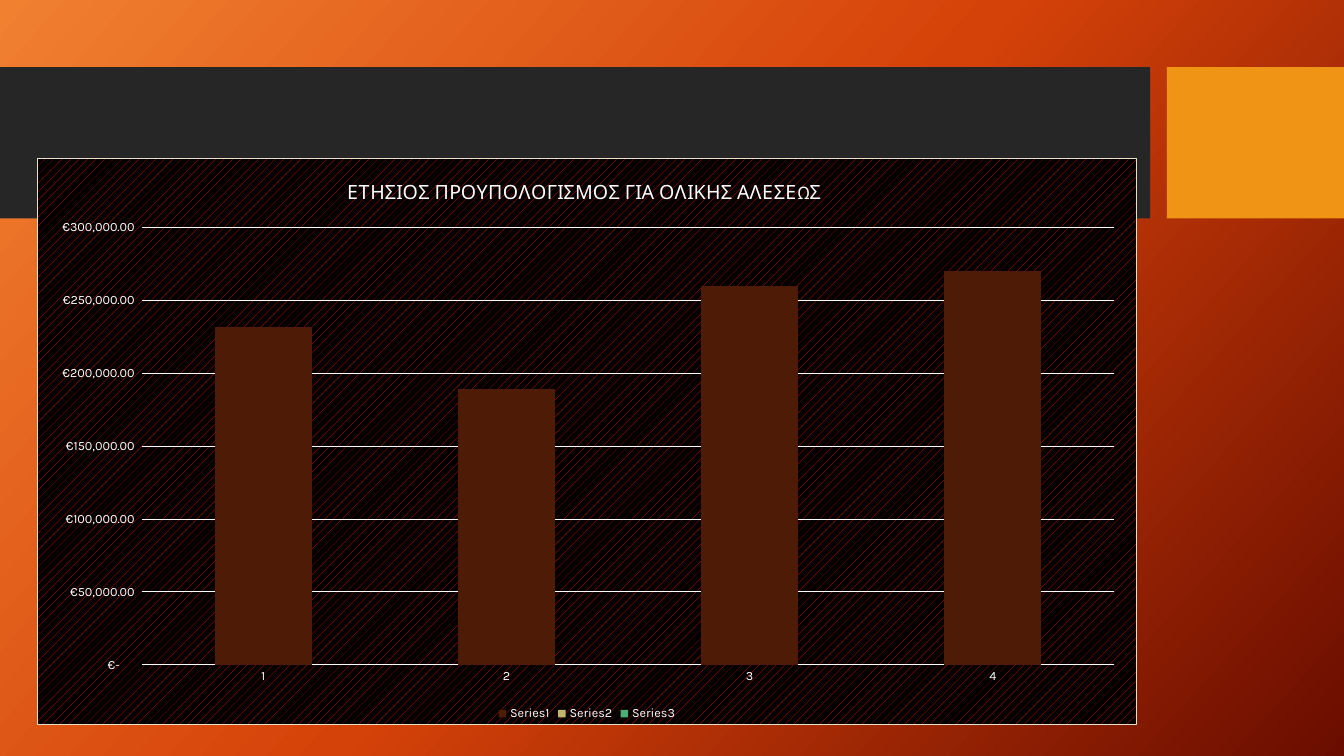
"""Build a slide with a stacked column chart of a yearly budget."""
from pptx import Presentation
from pptx.chart.data import CategoryChartData
from pptx.dml.color import RGBColor
from pptx.enum.chart import XL_CHART_TYPE as ChartType, XL_LEGEND_POSITION as LegendPos, XL_TICK_MARK as Tick
from pptx.enum.shapes import MSO_SHAPE as Shape
from pptx.oxml import parse_xml
from pptx.oxml.ns import nsdecls, qn
from pptx.util import Pt

FONT = "Karla"
WHITE = "FFFFFF"
TITLE = "ΕΤΗΣΙΟΣ ΠΡΟΥΠΟΛΟΓΙΣΜΟΣ ΓΙΑ ΟΛΙΚΗΣ ΑΛΕΣΕΩΣ "
GRADIENT = [(0, "F18031"), (50, "D54209"), (100, "6A0D00")]
GRADIENT_ANGLE = 42
BANDS = [(0, 821.5, "262626"), (833.5, 126.5, "F09415")]
BAND_TOP, BAND_HEIGHT = 48, 108
CHART_BOX = (26.2, 113, 786, 405.2)
PLOT_AREA = {"x": 0.095, "y": 0.122, "w": 0.885, "h": 0.772}
CATEGORIES = ["1", "2", "3", "4"]
SERIES = [
    ("Series1", [232000, 189000, 260000, 270000], "4E1B07"),
    ("Series2", [None] * 4, "C1B56B"),
    ("Series3", [None] * 4, "4BAF73"),
]
EURO = '_("€"* #,##0.00_);_("€"* \\(#,##0.00\\);_("€"* "-"??_);_(@_)'


def rgb(value):
    return RGBColor.from_string(value)


def style_font(font, size):
    font.name, font.size, font.bold = FONT, Pt(size), False
    font.color.rgb = rgb(WHITE)


def set_background(slide):
    slide.background.fill.solid()
    solid = next(slide._element.iter(qn("p:bgPr"))).find(qn("a:solidFill"))
    stops = "".join(
        f'<a:gs pos="{pos * 1000}"><a:srgbClr val="{color}"/></a:gs>' for pos, color in GRADIENT
    )
    gradient = parse_xml(
        f'<a:gradFill {nsdecls("a")} rotWithShape="1"><a:gsLst>{stops}</a:gsLst>'
        f'<a:lin ang="{GRADIENT_ANGLE * 60000}" scaled="0"/></a:gradFill>'
    )
    solid.getparent().replace(solid, gradient)


def add_bands(slide):
    for left, width, color in BANDS:
        sp = slide.shapes.add_shape(
            Shape.RECTANGLE, Pt(left), Pt(BAND_TOP), Pt(width), Pt(BAND_HEIGHT)
        )
        sp.shadow.inherit = False
        sp.fill.solid()
        sp.fill.fore_color.rgb = rgb(color)
        sp.line.fill.background()


def style_chart_area(chart):
    chart._chartSpace.find(qn("c:chart")).addnext(parse_xml(
        f'<c:spPr {nsdecls("c", "a")}><a:pattFill prst="pct20">'
        '<a:fgClr><a:srgbClr val="FF0000"/></a:fgClr>'
        '<a:bgClr><a:srgbClr val="000000"/></a:bgClr></a:pattFill>'
        f'<a:ln w="{Pt(0.75)}"><a:solidFill><a:srgbClr val="E6E1C4"/></a:solidFill></a:ln></c:spPr>'
    ))
    plot_area = next(chart._chartSpace.iter(qn("c:plotArea")))
    layout = plot_area.find(qn("c:layout"))
    if layout is not None:
        plot_area.remove(layout)
    modes = "".join(f'<c:{side}Mode val="edge"/>' for side in "xy")
    sizes = "".join(f'<c:{side} val="{share}"/>' for side, share in PLOT_AREA.items())
    plot_area.insert(0, parse_xml(
        f'<c:layout {nsdecls("c")}><c:manualLayout><c:layoutTarget val="inner"/>'
        f'{modes}{sizes}</c:manualLayout></c:layout>'
    ))


def add_budget_chart(slide):
    data = CategoryChartData(number_format=EURO)
    data.categories = CATEGORIES
    for name, values, _ in SERIES:
        data.add_series(name, values)
    box = [Pt(length) for length in CHART_BOX]
    chart = slide.shapes.add_chart(ChartType.COLUMN_STACKED, *box, data).chart
    style_font(chart.font, 10)

    chart.has_title = True
    r = chart.chart_title.text_frame.paragraphs[0].add_run()
    r.text = TITLE
    style_font(r.font, 14)
    chart.chart_title.include_in_layout = False

    chart.has_legend = True
    chart.legend.position = LegendPos.BOTTOM
    chart.legend.include_in_layout = False
    style_font(chart.legend.font, 9)

    plot = chart.plots[0]
    plot.gap_width, plot.overlap, plot.vary_by_categories = 150, 100, False
    for series, (_, _, color) in zip(plot.series, SERIES):
        series.format.fill.solid()
        series.format.fill.fore_color.rgb = rgb(color)

    for axis in (chart.category_axis, chart.value_axis):
        axis.major_tick_mark = axis.minor_tick_mark = Tick.NONE
        axis.format.line.fill.background()
        style_font(axis.tick_labels.font, 9)
    values = chart.value_axis
    values.minimum_scale, values.maximum_scale, values.major_unit = 0, 300000, 50000
    values.tick_labels.number_format = EURO
    values.tick_labels.number_format_is_linked = False
    values.has_major_gridlines = True
    grid = values.major_gridlines.format.line
    grid.width = Pt(0.75)
    grid.color.rgb = rgb(WHITE)
    style_chart_area(chart)


def main():
    prs = Presentation()
    prs.slide_width, prs.slide_height = Pt(960), Pt(540)
    slide = prs.slides.add_slide(prs.slide_layouts[6])
    set_background(slide)
    add_bands(slide)
    add_budget_chart(slide)
    prs.save("out.pptx")


if __name__ == "__main__":
    main()
